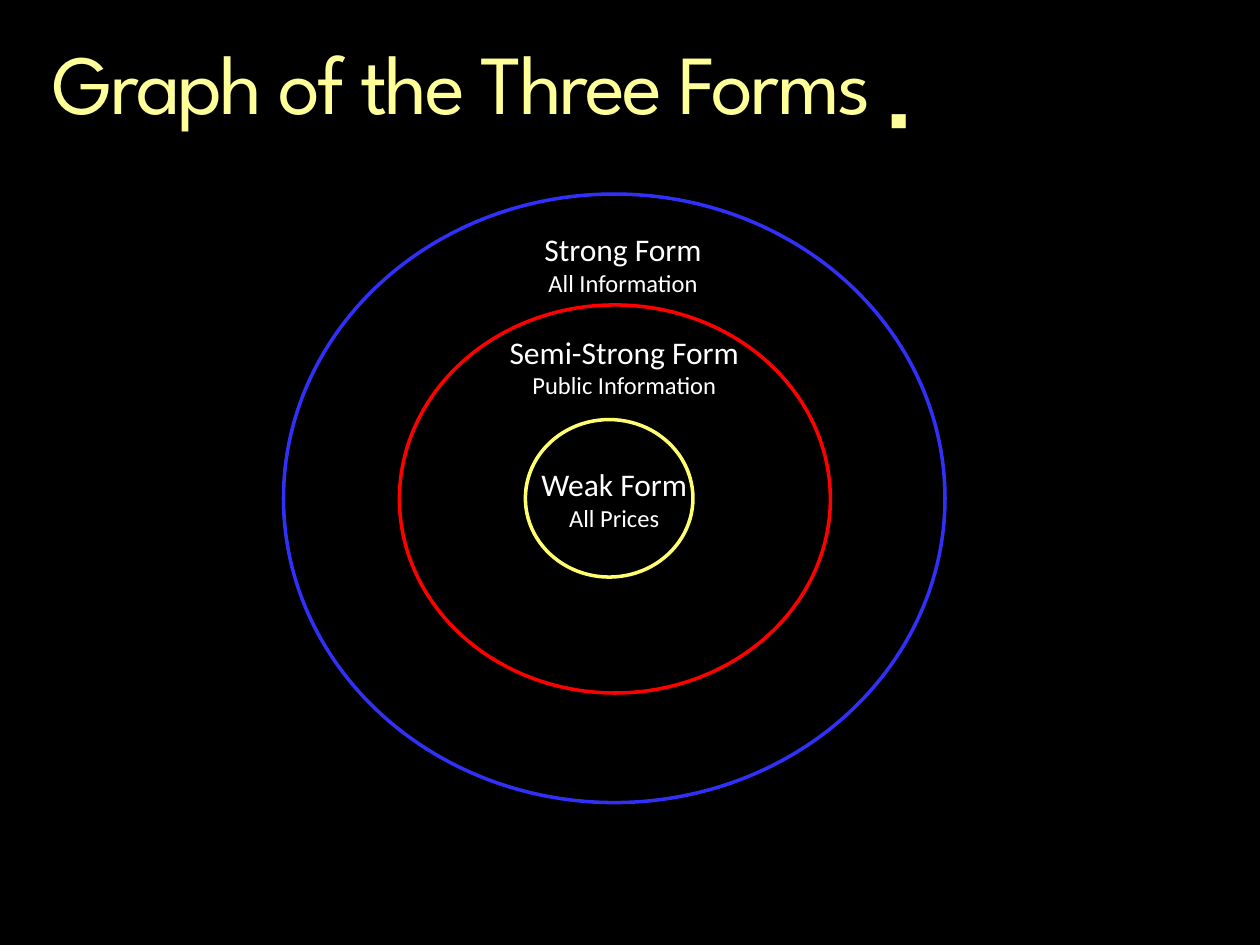
from pptx import Presentation
from pptx.dml.color import RGBColor
from pptx.enum.shapes import MSO_SHAPE
from pptx.enum.text import MSO_ANCHOR, MSO_AUTO_SIZE, PP_ALIGN
from pptx.util import Inches, Pt

BLACK = RGBColor(0x00, 0x00, 0x00)
WHITE = RGBColor(0xFF, 0xFF, 0xFF)
PALE_YELLOW = RGBColor(0xFF, 0xFF, 0x99)
YELLOW = RGBColor(0xFF, 0xFF, 0x70)
RED = RGBColor(0xFF, 0x00, 0x00)
BLUE = RGBColor(0x30, 0x30, 0xF8)

RINGS = [
    ((4.17, 3.33, 1.33, 1.25), YELLOW),
    ((3.17, 2.42, 3.42, 3.08), RED),
    ((2.25, 1.54, 5.25, 4.83), BLUE),
]
LABELS = [
    ((4, 3.64, 1.75, 0.64), "Weak Form", "All Prices"),
    ((3.83, 2.59, 2.25, 0.64), "Semi-Strong Form", "Public Information"),
    ((3.82, 1.78, 2.25, 0.64), "Strong Form", "All Information"),
]


def apply_format(target, values):
    for name, value in values.items():
        setattr(target, name, value)


def inches(box):
    return [Inches(length) for length in box]


def place_title(slide, box):
    title = slide.shapes.title
    apply_format(title, dict(zip(("left", "top", "width", "height"), inches(box))))
    frame = title.text_frame
    apply_format(frame, {
        "margin_left": 0, "margin_top": 0, "margin_right": 0, "margin_bottom": 0,
        "word_wrap": True, "vertical_anchor": MSO_ANCHOR.TOP,
        "auto_size": MSO_AUTO_SIZE.SHAPE_TO_FIT_TEXT,
    })
    paragraph = frame.paragraphs[0]
    apply_format(paragraph, {"alignment": PP_ALIGN.LEFT, "line_spacing": 0.9})
    for text, baseline in (("Graph of the Three Forms ", 0), ("▪", -25000)):
        run = paragraph.add_run()
        run.text = text
        apply_format(run.font, {"name": "League Spartan", "size": Pt(48)})
        run.font.color.rgb = PALE_YELLOW
        properties = run._r.get_or_add_rPr()
        properties.set("spc", "-150")
        if baseline:
            properties.set("baseline", str(baseline))


def place_ring(slide, box, color):
    ring = slide.shapes.add_shape(MSO_SHAPE.OVAL, *inches(box))
    ring.shadow.inherit = False
    ring.fill.background()
    ring.line.color.rgb = color
    ring.line.width = Pt(2)


def place_label(slide, box, form, information):
    frame = slide.shapes.add_textbox(*inches(box)).text_frame
    apply_format(frame, {
        "word_wrap": True, "auto_size": MSO_AUTO_SIZE.SHAPE_TO_FIT_TEXT,
    })
    frame.text = f"{form}\n{information}"
    for paragraph, size in zip(frame.paragraphs, (18, 14)):
        paragraph.alignment = PP_ALIGN.CENTER
        font = paragraph.runs[0].font
        apply_format(font, {"name": "Calibri", "size": Pt(size)})
        font.color.rgb = WHITE


def main():
    presentation = Presentation()
    presentation.slide_width = Inches(10)
    presentation.slide_height = Inches(7.5)
    slide = presentation.slides.add_slide(presentation.slide_layouts[5])
    slide.background.fill.solid()
    slide.background.fill.fore_color.rgb = BLACK
    place_title(slide, (0.42, 0.25, 9.17, 0.73))
    for box, color in RINGS:
        place_ring(slide, box, color)
    for box, form, information in LABELS:
        place_label(slide, box, form, information)
    presentation.save("out.pptx")


if __name__ == "__main__":
    main()
